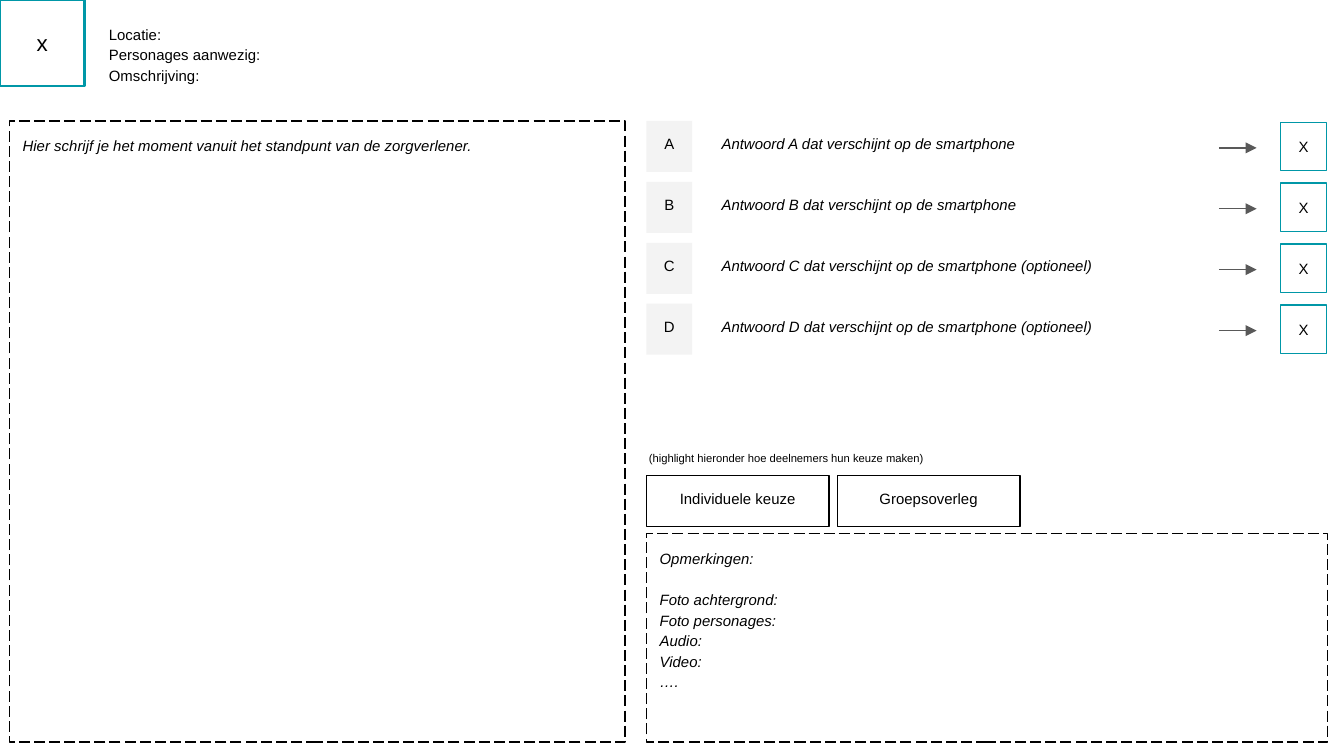
from dataclasses import dataclass

from lxml import etree
from pptx import Presentation
from pptx.dml.color import RGBColor
from pptx.enum import dml, shapes, text
from pptx.oxml import ns
from pptx.util import Inches, Pt

COLORS = {"teal": "0097A7", "white": "FFFFFF", "black": "000000",
          "pale": "F3F3F3", "gray": "595959"}
MID = text.PP_ALIGN.CENTER
LEFT = text.PP_ALIGN.LEFT


@dataclass
class Area:
    left: float
    top: float
    width: float
    height: float

    def emu(self) -> list:
        return [Inches(v) for v in (self.left, self.top, self.width, self.height)]


@dataclass
class Style:
    size: float = 8
    italic: bool = False
    align: text.PP_ALIGN = LEFT
    anchor: text.MSO_ANCHOR = text.MSO_ANCHOR.TOP
    space: float = 1
    inset: float = 0.1


@dataclass
class Look:
    fill: str = ""
    line: str = ""
    width: float = 0.75
    dash: bool = False


LABEL = Style(align=MID)
MARK = Style(align=MID, anchor=text.MSO_ANCHOR.MIDDLE)
NOTE = Style(italic=True, space=1.15)
FRAME = Look(line="black", dash=True)


def rgb(name: str) -> RGBColor:
    return RGBColor.from_string(COLORS[name])


def write(shape, words: str, style: Style) -> None:
    frame = shape.text_frame
    frame.text = words
    frame.word_wrap = True
    frame.auto_size = text.MSO_AUTO_SIZE.NONE
    frame.vertical_anchor = style.anchor
    frame.margin_left = frame.margin_right = Inches(0.1)
    frame.margin_top = frame.margin_bottom = Inches(style.inset)
    for para in frame.paragraphs:
        para.alignment = style.align
        para.line_spacing = style.space
        para.font.name = "Arial"
        para.font.size = Pt(style.size)
        para.font.italic = style.italic
        para.font.color.rgb = rgb("black")


def box(slide, area: Area, look: Look, words: str, style: Style):
    shape = slide.shapes.add_shape(shapes.MSO_SHAPE.RECTANGLE, *area.emu())
    shape.shadow.inherit = False
    if look.fill:
        shape.fill.solid()
        shape.fill.fore_color.rgb = rgb(look.fill)
    else:
        shape.fill.background()
    if look.line:
        shape.line.color.rgb = rgb(look.line)
        shape.line.width = Pt(look.width)
        if look.dash:
            shape.line.dash_style = dml.MSO_LINE.LONG_DASH
    else:
        shape.line.fill.background()
    write(shape, words, style)
    return shape


def label(slide, area: Area, words: str, style: Style) -> None:
    write(slide.shapes.add_textbox(*area.emu()), words, style)


def arrow(slide, left: float, right: float, y: float) -> None:
    line = slide.shapes.add_connector(
        shapes.MSO_CONNECTOR.STRAIGHT, *[Inches(v) for v in (left, y, right, y)])
    line.line.color.rgb = rgb("gray")
    line.line.width = Pt(0.75)
    etree.SubElement(line.line._get_or_add_ln(), ns.qn("a:tailEnd"), type="triangle")
    etree.SubElement(line._element.spPr, ns.qn("a:effectLst"))


def answer(slide, key: str, extra: str, top: float) -> None:
    """Draw one row: letter, answer text, arrow and target box."""
    box(slide, Area(4.81, top, 0.34, 0.38), Look(fill="pale"), key, LABEL)
    label(slide, Area(5.27, top, 4.61, 0.38),
          f"Antwoord {key} dat verschijnt op de smartphone{extra}", Style(italic=True))
    arrow(slide, 9.07, 9.35, top + 0.2)
    box(slide, Area(9.53, top + 0.01, 0.34, 0.36),
        Look(fill="white", line="teal"), "X", MARK)


def main() -> None:
    deck = Presentation()
    deck.slide_width = Inches(10)
    deck.slide_height = deck.slide_width * 9 // 16
    slide = deck.slides.add_slide(deck.slide_layouts[5])

    title = slide.shapes.title
    title.left, title.top, title.width, title.height = Area(0.71, 0.07, 9.2, 0.76).emu()
    write(title, "Locatie:\nPersonages aanwezig:\nOmschrijving:", Style(space=1.15))

    box(slide, Area(0, 0, 0.63, 0.64), Look("white", "teal", 1.5), "x",
        Style(12, align=MID, anchor=text.MSO_ANCHOR.MIDDLE))
    box(slide, Area(0.07, 0.9, 4.58, 4.62), FRAME,
        "Hier schrijf je het moment vanuit het standpunt van de zorgverlener.", NOTE)

    pitch = (2.26 - 0.9) / 3
    for i, key in enumerate("ABCD"):
        answer(slide, key, " (optioneel)" if i > 1 else "", 0.9 + i * pitch)

    label(slide, Area(4.73, 3.31, 4.73, 0.2),
          "(highlight hieronder hoe deelnemers hun keuze maken)",
          Style(6, inset=0.05))
    for i, words in enumerate(("Individuele keuze", "Groepsoverleg")):
        box(slide, Area(4.81 + i * 1.42, 3.54, 1.36, 0.38),
            Look(line="black"), words, LABEL)

    notes = box(slide, Area(4.81, 3.97, 5.07, 1.55), FRAME,
                "Opmerkingen:\nFoto achtergrond:\nFoto personages:\nAudio:\nVideo:\n….",
                NOTE)
    notes.text_frame.paragraphs[1].space_before = Pt(11)

    deck.save("out.pptx")


if __name__ == "__main__":
    main()
